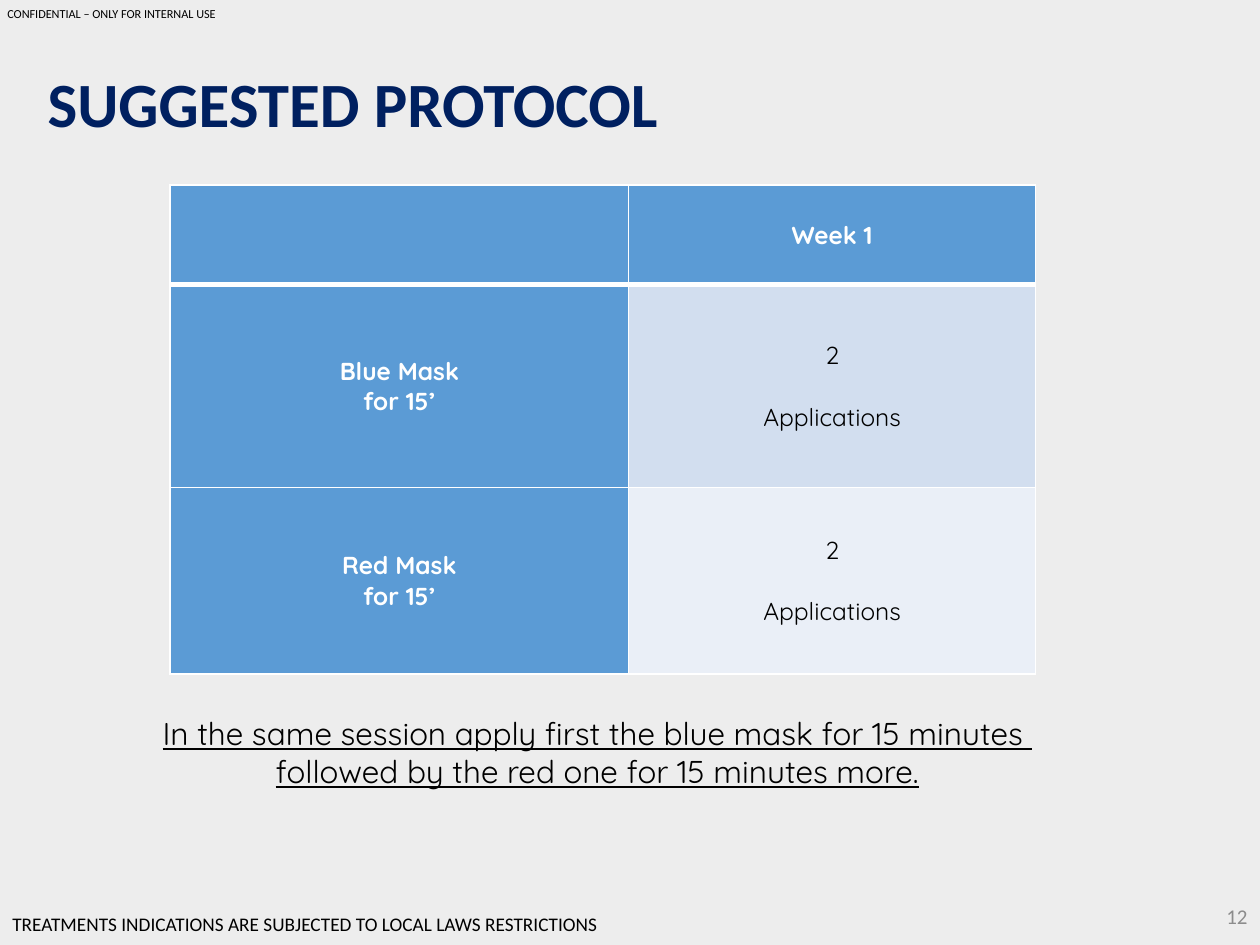
from lxml import etree
from pptx import Presentation
from pptx.dml.color import RGBColor
from pptx.enum.text import MSO_ANCHOR, PP_ALIGN
from pptx.oxml.ns import qn
from pptx.util import Inches, Pt

LEFT, CENTER, RIGHT = PP_ALIGN.LEFT, PP_ALIGN.CENTER, PP_ALIGN.RIGHT
TOP, MIDDLE = MSO_ANCHOR.TOP, MSO_ANCHOR.MIDDLE

THEME = {
    "bg": "EDEDED", "navy": "002060", "gray": "8C8C8C", "black": "000000",
    "white": "FFFFFF", "blue": "5B9BD5", "band1": "D2DEEF", "band2": "EAEFF7",
    "title": 36, "note": 18, "cell": 14, "page": 12, "footer": 11, "label": 7,
    "sans": "Calibri", "round": "Quicksand",
}


def write(tf, lines, align, color, gap=0, **fmt):
    for i, line in enumerate(lines):
        p = tf.paragraphs[0] if i == 0 else tf.add_paragraph()
        p.alignment = align
        p.space_before = Pt(gap if i else 0)
        r = p.add_run()
        r.text = line
        r.font.color.rgb = RGBColor.from_string(THEME[color])
        for name, value in fmt.items():
            setattr(r.font, name, value)


def border(cell, side, width):
    ln = etree.SubElement(cell._tc.get_or_add_tcPr(), qn(f"a:ln{side}"), w=str(Pt(width)))
    fill = etree.SubElement(ln, qn("a:solidFill"))
    etree.SubElement(fill, qn("a:srgbClr"), val=THEME["white"])


prs = Presentation()
prs.slide_width, prs.slide_height = Inches(10), Inches(7.5)
s = prs.slides.add_slide(prs.slide_layouts[6])
s.background.fill.solid()
s.background.fill.fore_color.rgb = RGBColor.from_string(THEME["bg"])

texts = [
    ((9.28, 7.07, 0.72, 0.4), ["12"], RIGHT, MIDDLE, True, "gray", "page", "sans", {}),
    ((0.28, 0.46, 7.14, 0.71), ["SUGGESTED PROTOCOL"], LEFT, TOP, True,
     "navy", "title", "sans", {"bold": True}),
    ((-0.04, 0, 1.89, 0.22), ["CONFIDENTIAL – ONLY FOR INTERNAL USE"], LEFT, TOP, False,
     "black", "label", "sans", {}),
    ((0.99, 5.62, 7.5, 0.71),
     ["In the same session apply first the blue mask for 15 minutes ",
      "followed by the red one for 15 minutes more."],
     CENTER, TOP, True, "black", "note", "round", {"underline": True}),
    ((0, 7.19, 7.97, 0.29),
     ["TREATMENTS INDICATIONS ARE SUBJECTED TO LOCAL LAWS RESTRICTIONS"],
     LEFT, TOP, True, "black", "footer", "sans", {}),
]
for box, lines, align, anchor, wrap, color, size, font, extra in texts:
    tf = s.shapes.add_textbox(*map(Inches, box)).text_frame
    tf.word_wrap, tf.vertical_anchor = wrap, anchor
    write(tf, lines, align, color, size=Pt(THEME[size]), name=THEME[font], **extra)

col_widths = [3.64, 3.23]
row_heights = [0.79, 1.61, 1.48]
rows = [
    [[], ["Week 1"]],
    [["Blue Mask", "for 15’"], ["2", "Applications"]],
    [["Red Mask", "for 15’"], ["2", "Applications"]],
]
table = s.shapes.add_table(len(rows), len(col_widths), Inches(1.35), Inches(1.47),
                           Inches(sum(col_widths)), Inches(sum(row_heights))).table
for col, width in zip(table.columns, col_widths):
    col.width = Inches(width)
for row, height in zip(table.rows, row_heights):
    row.height = Inches(height)

for i, row in enumerate(rows):
    for j, lines in enumerate(row):
        cell = table.cell(i, j)
        heading = i == 0 or j == 0
        for side in "LRTB":
            thick = (i, side) in [(0, "B"), (1, "T")]
            border(cell, side, 3 if thick else 1)
        cell.fill.solid()
        fill = "blue" if heading else f"band{i}"
        cell.fill.fore_color.rgb = RGBColor.from_string(THEME[fill])
        cell.vertical_anchor = MIDDLE
        cell.margin_left = cell.margin_right = Inches(0.07)
        cell.margin_top = cell.margin_bottom = 0
        write(cell.text_frame, lines, CENTER, "white" if heading else "black",
              gap=0 if heading else 17.5, size=Pt(THEME["cell"]),
              name=THEME["round"], bold=heading)

prs.save("out.pptx")
